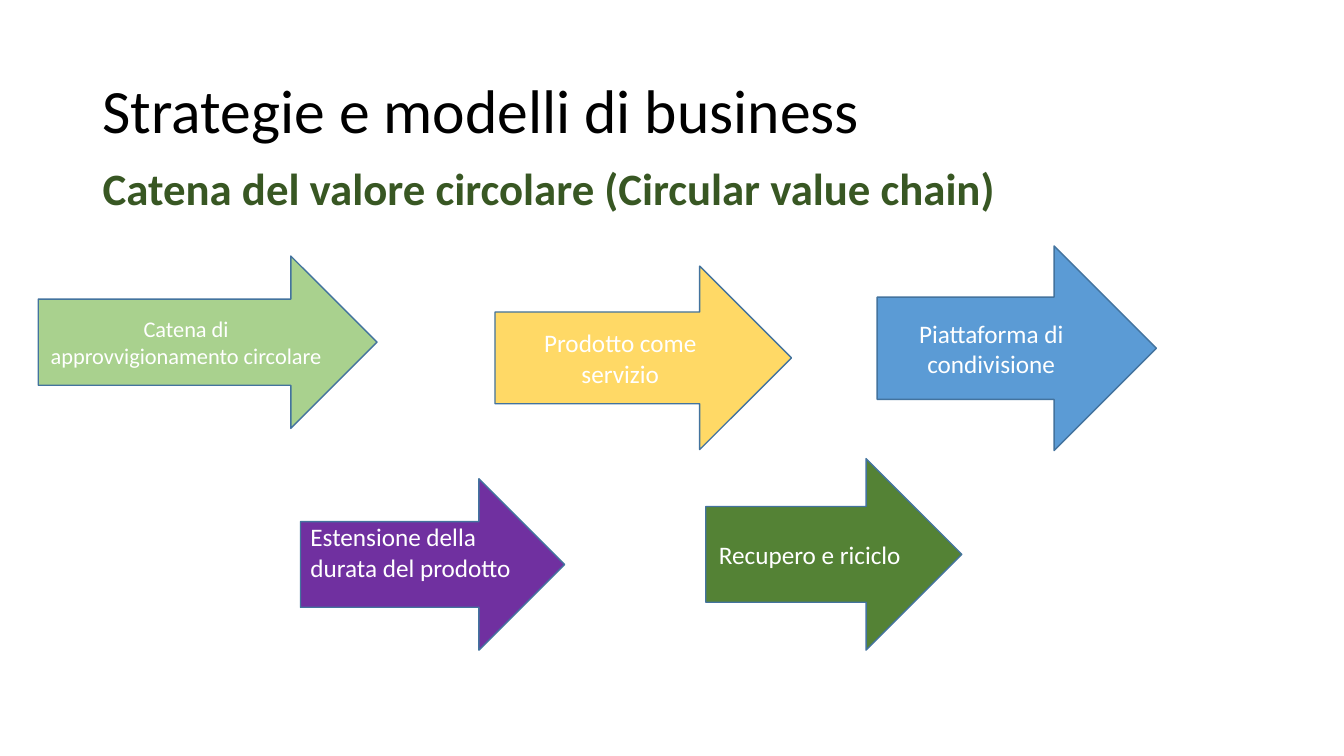
import pptx
import pptx.dml.color
import pptx.enum.shapes
import pptx.enum.text
import pptx.util

Inches = pptx.util.Inches
Align = pptx.enum.text.PP_ALIGN
Anchor = pptx.enum.text.MSO_ANCHOR

STRATEGIES = [
    ("Catena di approvvigionamento circolare", "A9D18E", 16, (0.38, 2.54, 3.36, 1.71)),
    ("Piattaforma di condivisione", "5B9BD5", 18, (8.7, 2.44, 2.77, 2.03)),
    ("Prodotto come servizio", "FFD966", 18, (4.91, 2.64, 2.94, 1.82)),
    ("Recupero e riciclo", "548235", 18, (7, 4.55, 2.54, 1.9)),
]
EXTENSION = ("Estensione della durata del prodotto", "7030A0", 18, (2.98, 4.75, 2.62, 1.7))


def color(hex_code):
    """Return the colour for a hex string."""
    return pptx.dml.color.RGBColor.from_string(hex_code)


def write(frame, text, size, hex_code, align, anchor, bold=False):
    """Write one styled run into a wrapping text frame and return its paragraph."""
    frame.word_wrap = True
    frame.vertical_anchor = anchor
    paragraph = frame.paragraphs[0]
    paragraph.alignment = align
    run = paragraph.add_run()
    run.text = text
    run.font.name = "Calibri"
    run.font.size = pptx.util.Pt(size)
    run.font.bold = bold
    run.font.color.rgb = color(hex_code)
    return paragraph


def add_heading(slide, box, text, size, hex_code, anchor, bold=False):
    """Place a left-aligned heading in the given box."""
    heading = slide.shapes.add_textbox(*map(Inches, box))
    paragraph = write(heading.text_frame, text, size, hex_code, Align.LEFT, anchor, bold)
    paragraph.line_spacing = 0.9


def add_strategy(slide, box, text, fill, size, align=Align.CENTER, anchor=Anchor.MIDDLE):
    """Place a labelled arrow in the given box and return it."""
    arrow = slide.shapes.add_shape(
        pptx.enum.shapes.MSO_SHAPE.RIGHT_ARROW, *map(Inches, box))
    arrow.shadow.inherit = False
    arrow.fill.solid()
    arrow.fill.fore_color.rgb = color(fill)
    arrow.line.color.rgb = color("43739E")
    arrow.line.width = pptx.util.Pt(1)
    write(arrow.text_frame, text, size, "FFFFFF", align, anchor)
    return arrow


def build_value_chain(slide):
    """Place the headings and the five strategy arrows."""
    add_heading(slide, (0.92, 0.4, 11.5, 1.45), "Strategie e modelli di business",
                44, "000000", Anchor.MIDDLE)
    add_heading(slide, (0.92, 1.61, 11.5, 0.7),
                "Catena del valore circolare (Circular value chain)",
                32, "385723", Anchor.TOP, bold=True)
    for text, fill, size, box in STRATEGIES:
        add_strategy(slide, box, text, fill, size)
    text, fill, size, box = EXTENSION
    extension = add_strategy(slide, box, text, fill, size, Align.LEFT, Anchor.TOP)
    extension.text_frame.margin_top = 0


def main():
    """Build and save the presentation."""
    deck = pptx.Presentation()
    deck.slide_width = Inches(13.33)
    deck.slide_height = Inches(7.5)
    build_value_chain(deck.slides.add_slide(deck.slide_layouts[6]))
    deck.save("out.pptx")


if __name__ == "__main__":
    main()
